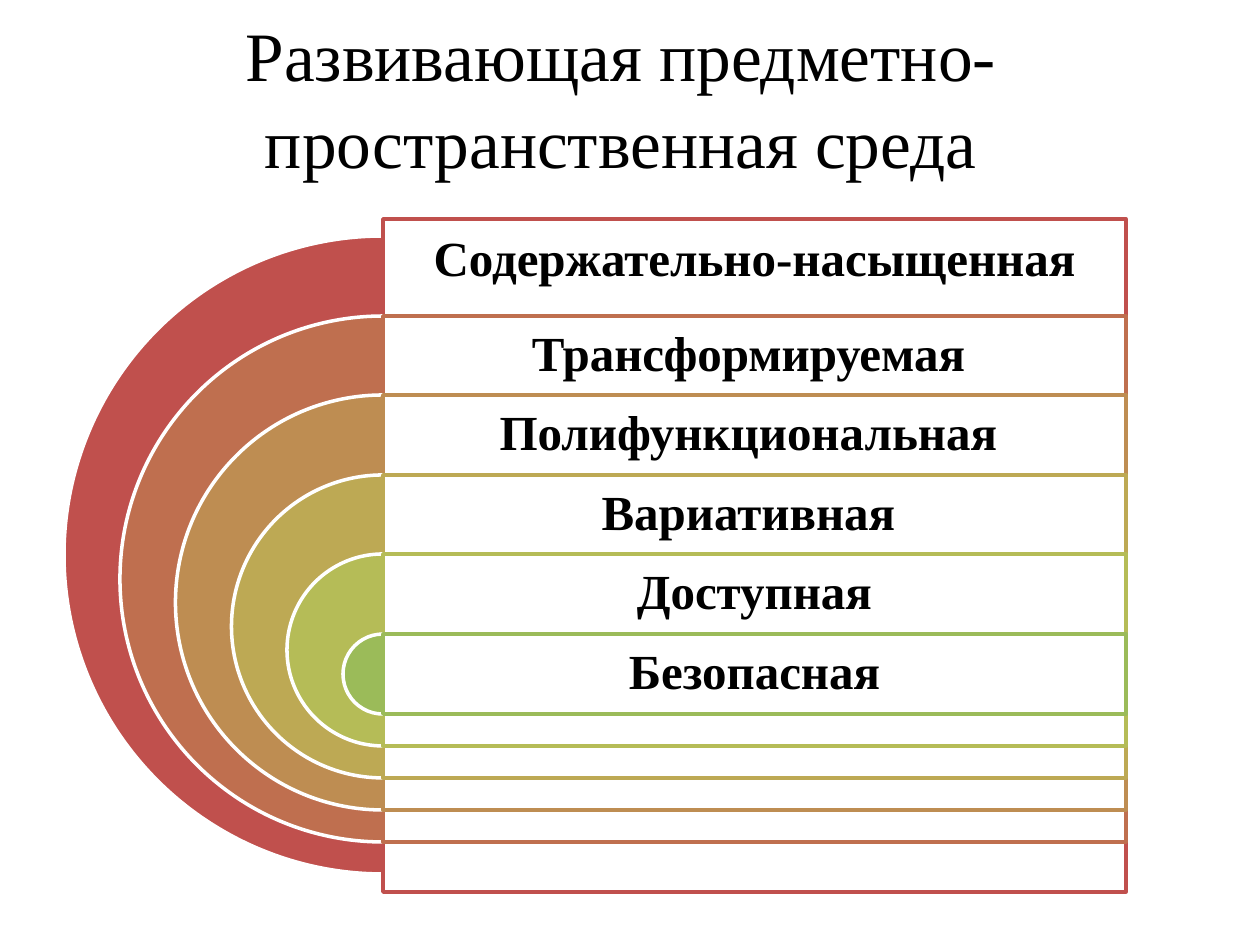
from pptx import Presentation
from pptx import util as u
from pptx.dml.color import RGBColor
from pptx.enum import shapes, text
from pptx.oxml.ns import qn
from lxml import etree

PX = 914400 / 126  # EMU in one px
FONT = "Times New Roman"
BLACK = RGBColor(0, 0, 0)
WHITE = RGBColor(255, 255, 255)

# Label and colour of each layer, from the outermost inwards
LAYERS = [
    ("Содержательно-насыщенная", RGBColor(0xC0, 0x50, 0x4D)),
    ("Трансформируемая ", RGBColor(0xBF, 0x6F, 0x4F)),
    ("Полифункциональная ", RGBColor(0xBE, 0x8D, 0x52)),
    ("Вариативная ", RGBColor(0xBD, 0xA9, 0x54)),
    ("Доступная", RGBColor(0xB5, 0xBC, 0x57)),
    ("Безопасная", RGBColor(0x9B, 0xBB, 0x59)),
]


def emu(*lengths):
    return [u.Emu(round(length * PX)) for length in lengths]


def set_values(target, values):
    for name, value in values.items():
        setattr(target, name, value)


def write(shape, words, frame_values, para_values, font_values):
    frame = shape.text_frame
    set_values(frame, {"word_wrap": True, "auto_size": text.MSO_AUTO_SIZE.NONE,
                       "vertical_anchor": text.MSO_ANCHOR.MIDDLE, **frame_values})
    para = frame.paragraphs[0]
    set_values(para, {"alignment": text.PP_ALIGN.CENTER, **para_values})
    span = para.add_run()
    span.text = words
    set_values(span.font, {"name": FONT, **font_values})
    span.font.color.rgb = BLACK


def add_outlined(page, kind, box, fill, line):
    shape = page.shapes.add_shape(kind, *emu(*box))
    shape.shadow.inherit = False
    shape.fill.solid()
    shape.fill.fore_color.rgb = fill
    shape.line.color.rgb = line
    shape.line.width = u.Pt(2)
    return shape


def add_title(page, box):
    title = page.shapes.title
    set_values(title, dict(zip(("left", "top", "width", "height"), emu(*box))))
    write(title, "Развивающая предметно-пространственная среда", {},
          {"line_spacing": 1.05}, {"size": u.Pt(39.6)})


def add_layer(page, words, colour, circle, panel, label_height):
    # Left half of a disc
    pie = add_outlined(page, shapes.MSO_SHAPE.PIE, circle, colour, WHITE)
    pie.adjustments[0], pie.adjustments[1] = 54, 162

    # Slightly transparent panel
    rect = add_outlined(page, shapes.MSO_SHAPE.RECTANGLE, panel, WHITE, colour)
    fill_colour = rect.fill._xPr.find(qn("a:solidFill"))[0]
    etree.SubElement(fill_colour, qn("a:alpha")).set("val", "90000")

    # Label in the visible strip of the panel
    left, top, width, _ = panel
    label = page.shapes.add_textbox(*emu(left, top, width, label_height))
    margins = dict.fromkeys(
        ("margin_left", "margin_right", "margin_top", "margin_bottom"), emu(15)[0])
    write(label, words, margins, {"line_spacing": 0.9},
          {"size": u.Pt(28), "bold": True})


def add_nested_layers(page, box):
    left, top, width, height = box
    outer, inner, overhang, strip = 638, 80, 17, 80
    steps = len(LAYERS) - 1
    axis = left + outer // 2
    for index, (words, colour) in enumerate(LAYERS):
        size = round(outer - index * (outer - inner) / steps)
        circle_top = top + overhang + round(index * 398 / steps)
        circle = (axis - size / 2, circle_top, size, size)
        panel_top, panel_height, label_height = circle_top, size, strip
        if index == 0:  # the outermost panel reaches beyond its disc
            panel_top, panel_height, label_height = top, height, strip + 4
        panel = (axis, panel_top, left + width - axis, panel_height)
        add_layer(page, words, colour, circle, panel, label_height)


def main():
    deck = Presentation()
    deck.slide_width, deck.slide_height = emu(1260, 945)
    page = deck.slides.add_slide(deck.slide_layouts[5])
    add_title(page, (15, 16, 1212, 158))
    add_nested_layers(page, (64, 219, 1062, 673))
    deck.save("out.pptx")


if __name__ == "__main__":
    main()
